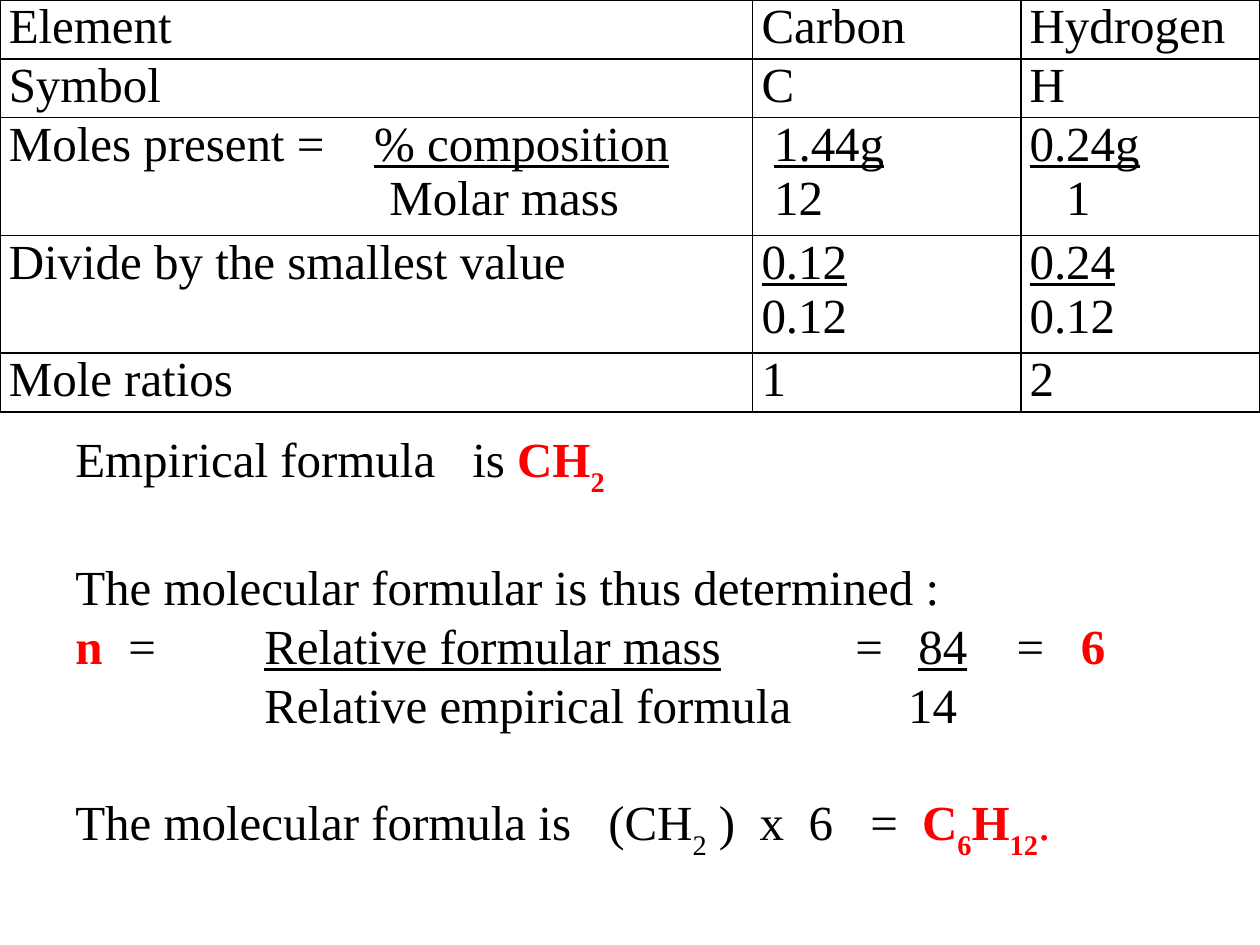
from dataclasses import dataclass

from lxml import etree
from pptx import Presentation
from pptx.dml.color import RGBColor
from pptx.enum.text import MSO_ANCHOR
from pptx.oxml.ns import qn
from pptx.util import Inches, Pt

TOP = MSO_ANCHOR.TOP
WIDE, HIGH = 10, 7.5


@dataclass(frozen=True)
class Theme:
    font: str = "Times New Roman"
    size: int = 28
    ink: str = "000000"
    hot: str = "FF0000"
    rule: float = 1
    skip: float = 33.5  # space between blocks


@dataclass(frozen=True)
class Run:
    text: str
    under: bool = False
    bold: bool = False
    hot: bool = False
    sub: bool = False


@dataclass(frozen=True)
class Line:
    runs: tuple[Run, ...]
    indent: float = 0
    tabs: tuple[float, ...] = ()
    before: float = 0


THEME = Theme()


def plain(text: str) -> Line:
    return Line((Run(text),))


def top(text: str) -> Line:
    """Upper half of a fraction."""
    return Line((Run(text, under=True),))


def red(text: str, sub: bool = False) -> Run:
    return Run(text, bold=True, hot=True, sub=sub)


def write(frame, lines: tuple[Line, ...]) -> None:
    for i, line in enumerate(lines):
        para = frame.paragraphs[0] if i == 0 else frame.add_paragraph()
        para.space_before = Pt(line.before)
        props = para._p.get_or_add_pPr()
        if line.indent:
            props.set("marL", str(Inches(line.indent)))
        if line.tabs:
            stops = etree.SubElement(props, qn("a:tabLst"))
            for pos in line.tabs:
                etree.SubElement(stops, qn("a:tab"), pos=str(Inches(pos)), algn="l")
        for part in line.runs:
            run = para.add_run()
            run.text = part.text
            font = run.font
            font.name, font.size = THEME.font, Pt(THEME.size)
            font.bold, font.underline = part.bold, part.under
            font.color.rgb = RGBColor.from_string(THEME.hot if part.hot else THEME.ink)
            if part.sub:
                run._r.get_or_add_rPr().set("baseline", "-30000")


def frame_cell(cell) -> None:
    cell.fill.background()
    props = cell._tc.get_or_add_tcPr()
    for i, side in enumerate("LRTB"):
        edge = etree.Element(qn(f"a:ln{side}"), w=str(Pt(THEME.rule)))
        fill = etree.SubElement(edge, qn("a:solidFill"))
        etree.SubElement(fill, qn("a:srgbClr"), val=THEME.ink)
        props.insert(i, edge)


def draw_table(slide, rows: tuple, spans: tuple[int, ...], cols: tuple[float, ...]) -> None:
    high = 3.27
    unit = high / sum(spans)
    shape = slide.shapes.add_table(
        len(rows), len(cols), 0, 0, Inches(WIDE), Inches(high))
    table = shape.table
    table.first_row = table.horz_banding = False
    for col, share in zip(table.columns, cols):
        col.width = Inches(WIDE * share / sum(cols))
    for row, span, cells in zip(table.rows, spans, rows):
        row.height = Inches(unit * span)
        for cell, lines in zip(row.cells, cells):
            cell.margin_left = cell.margin_right = Inches(0.07)
            cell.margin_top = cell.margin_bottom = 0
            frame_cell(cell)
            write(cell.text_frame, lines)


def draw_text(slide, lines: tuple[Line, ...]) -> None:
    box = slide.shapes.add_textbox(
        Inches(0.5), Inches(3.38), Inches(9.33), Inches(3.48))
    frame = box.text_frame
    frame.word_wrap = True
    frame.vertical_anchor = TOP
    frame.margin_top = Inches(0.02)
    write(frame, lines)


# Table content: rows of cells, each cell a group of lines
ROWS = (
    ((plain("Element"),), (plain("Carbon"),), (plain("Hydrogen"),)),
    ((plain("Symbol"),), (plain("C"),), (plain("H"),)),
    (
        (Line((Run("Moles present =\t"), Run("% composition", under=True)), tabs=(2.9,)),
         Line((Run("Molar mass"),), indent=3.02)),
        (Line((Run("1.44g", under=True),), indent=0.1), Line((Run("12"),), indent=0.1)),
        (top("0.24g"), Line((Run("1"),), indent=0.29)),
    ),
    (
        (plain("Divide by the smallest value"),),
        (top("0.12"), plain("0.12")),
        (top("0.24"), plain("0.12")),
    ),
    ((plain("Mole ratios"),), (plain("1"),), (plain("2"),)),
)

# Working below the table
WORK = (
    Line((Run("Empirical formula\tis "), red("CH"), red("2", sub=True)),
         tabs=(3.15,)),
    Line((Run("The molecular formular is thus determined :"),), before=THEME.skip),
    Line((red("n"), Run("\t=\t"), Run("Relative formular mass", under=True),
          Run("\t=\t"), Run("84", under=True), Run("\t=\t"), red("6")),
         tabs=(0.42, 1.5, 6.19, 6.69, 7.47, 7.98)),
    Line((Run("\tRelative empirical formula\t14"),), tabs=(1.5, 6.61)),
    Line((Run("The molecular formula is\t(CH"), Run("2", sub=True),
          Run(" )\tx\t6\t=\t"), red("C"), red("6", sub=True), red("H"),
          red("12", sub=True), Run(".", hot=True)),
         tabs=(4.23, 5.43, 5.82, 6.31, 6.72), before=THEME.skip),
)


def main() -> None:
    deck = Presentation()
    deck.slide_width, deck.slide_height = Inches(WIDE), Inches(HIGH)
    slide = deck.slides.add_slide(deck.slide_layouts[6])
    draw_table(slide, ROWS, (1, 1, 2, 2, 1), (5.98, 2.13, 1.9))
    draw_text(slide, WORK)
    deck.save("out.pptx")


if __name__ == "__main__":
    main()
